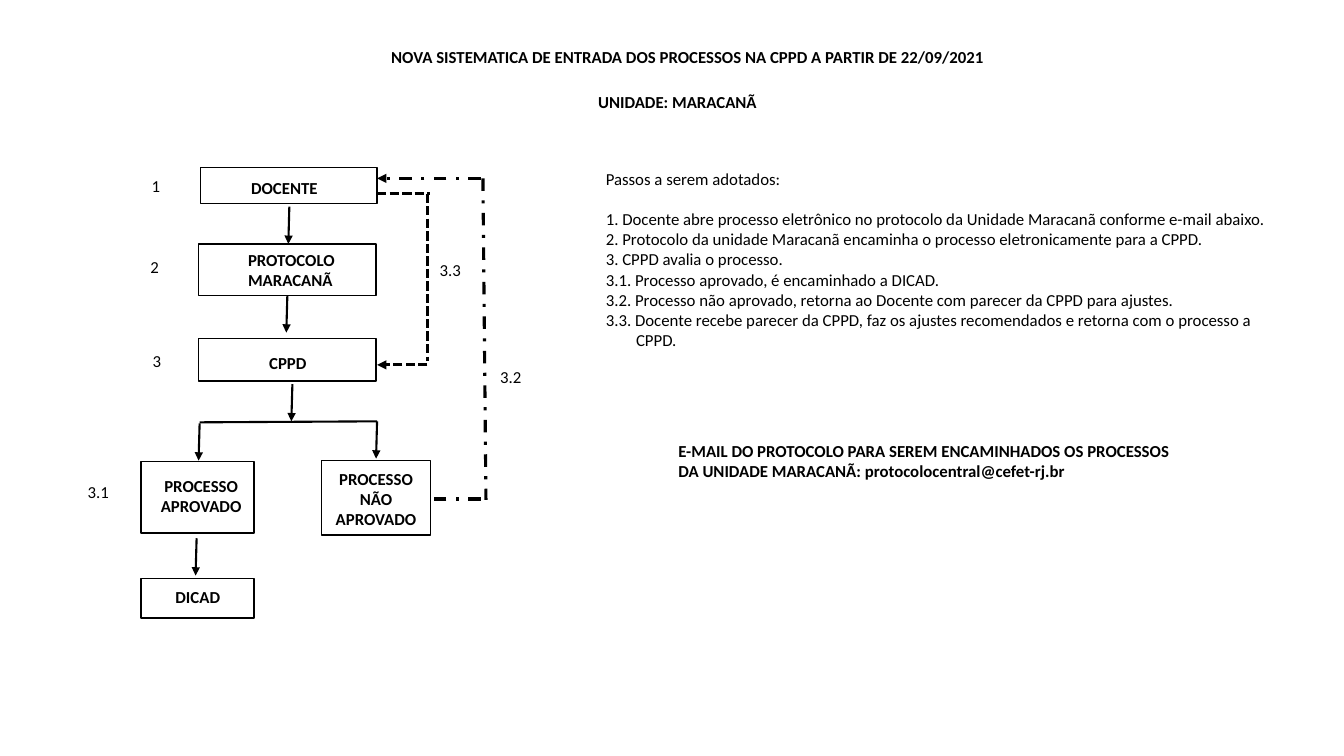
from dataclasses import dataclass
from pptx import Presentation
from pptx import util as u
from pptx.dml.color import RGBColor
from pptx.enum import dml, shapes, text
from pptx.oxml.ns import qn
from lxml import etree


@dataclass(frozen=True)
class Theme:
    ink: RGBColor = RGBColor(0, 0, 0)
    paper: RGBColor = RGBColor(255, 255, 255)
    face: str = "Calibri"
    size: int = 12
    thin: float = 1
    flow: float = 1.5
    loop: float = 2.25


T = Theme()
LEFT, MID = text.PP_ALIGN.LEFT, text.PP_ALIGN.CENTER
TOP, HALF = text.MSO_ANCHOR.TOP, text.MSO_ANCHOR.MIDDLE
DOT = dml.MSO_LINE.DASH_DOT
DASH = dml.MSO_LINE.SQUARE_DOT


def apply(obj, vals):
    for name, val in vals.items():
        setattr(obj, name, val)


def write(shape, lines, align=LEFT, bold=True, anchor=TOP, pad=(.1, .05, .1, .05)):
    frame = shape.text_frame
    frame.text = "\n".join(lines)
    sides = ("margin_left", "margin_top", "margin_right", "margin_bottom")
    apply(frame, {side: u.Inches(val) for side, val in zip(sides, pad)})
    apply(frame, {"word_wrap": True, "auto_size": text.MSO_AUTO_SIZE.NONE,
                  "vertical_anchor": anchor})
    for para in frame.paragraphs:
        para.alignment = align
        apply(para.font, {"name": T.face, "size": u.Pt(T.size), "bold": bold})
        para.font.color.rgb = T.ink
    return frame


def note(slide, box, lines, **form):
    return write(slide.shapes.add_textbox(*map(u.Inches, box)), lines, **form)


def block(slide, box, lines, edge, **form):
    shape = slide.shapes.add_shape(shapes.MSO_SHAPE.RECTANGLE, *map(u.Inches, box))
    shape.shadow.inherit = False
    shape.fill.solid()
    shape.fill.fore_color.rgb = T.paper
    shape.line.color.rgb = edge
    shape.line.width = u.Pt(T.thin)
    write(shape, lines, **form)


def link(slide, start, end, width, dash=None, head=False):
    line = slide.shapes.add_connector(
        shapes.MSO_CONNECTOR.STRAIGHT, *map(u.Inches, start + end))
    line.line.color.rgb = T.ink
    line.line.width = u.Pt(width)
    if dash:
        line.line.dash_style = dash
    props = line._element.spPr
    if head:
        etree.SubElement(props.find(qn("a:ln")), qn("a:tailEnd"), type="triangle")
    etree.SubElement(props, qn("a:effectLst"))


def heading(slide, x, y):
    title = slide.shapes.title
    place = {"left": x, "top": y, "width": 6.38, "height": .3}
    apply(title, {name: u.Inches(val) for name, val in place.items()})
    write(title, ["NOVA SISTEMATICA DE ENTRADA DOS PROCESSOS NA CPPD A PARTIR DE 22/09/2021"])
    note(slide, (x + .11, y + .45, 5.66, .3), ["UNIDADE: MARACANÃ"], align=MID)


def flow(slide, x, y):
    def at(point):
        return x + point[0], y + point[1]

    steps = [
        ((1.24, 0), (1.75, .36), ["DOCENTE"], LEFT, (.5, .1, 0, 0)),
        ((1.22, .76), (1.76, .51), ["PROTOCOLO", "MARACANÃ"], LEFT, (.49, .06, 0, 0)),
        ((1.22, 1.7), (1.76, .42), ["CPPD"], LEFT, (.7, .14, 0, 0)),
        ((.65, 2.92), (1.12, .71), ["PROCESSO APROVADO"], MID, (.14, .14, .07, 0)),
        ((2.44, 2.91), (1.08, .74), ["PROCESSO", "NÃO APROVADO"], MID, (.1, .08, .1, 0)),
        ((.65, 4.08), (1.12, .39), ["DICAD"], LEFT, (.34, .08, 0, 0)),
    ]
    for spot, size, lines, align, pad in steps:
        block(slide, at(spot) + size, lines, T.ink, align=align, pad=pad)

    tags = {"1": (.57, 0), "2": (.56, .81), "3": (.58, 1.74),
            "3.1": (0, 3.04), "3.2": (4.09, 1.9), "3.3": (3.49, .84)}
    for label, spot in tags.items():
        block(slide, at(spot) + (.45, .36), [label], T.paper,
              align=MID, bold=False, anchor=HALF)

    drops = [(2.12, .39), (2.1, 1.27), (2.15, 2.15),
             (2.99, 2.52), (1.23, 2.54), (1.2, 3.68)]
    for left, top in drops:
        link(slide, at((left, top)), at((left - .01, top + .37)), T.flow, head=True)
    link(slide, at((1.23, 2.53)), at((2.99, 2.52)), T.flow)

    loops = [
        (DOT, (4.02, 3.29), (3.53, 3.29), False),
        (DOT, (4.04, .11), (4.07, 3.3), False),
        (DOT, (4.02, .11), (2.99, .11), True),
        (DASH, (2.99, .26), (3.51, .26), False),
        (DASH, (3.49, .26), (3.49, 1.92), False),
        (DASH, (3.49, 1.96), (2.99, 1.96), True),
    ]
    for dash, start, end, head in loops:
        link(slide, at(start), at(end), T.loop, dash, head)


def guide(slide, x, y):
    frame = note(slide, (x, y, 6.79, 2.12), [
        "Passos a serem adotados:",
        "1. Docente abre processo eletrônico no protocolo da Unidade Maracanã conforme e-mail abaixo.",
        "2. Protocolo da unidade Maracanã encaminha o processo eletronicamente para a CPPD.",
        "3. CPPD avalia o processo.",
        "3.1. Processo aprovado, é encaminhado a DICAD.",
        "3.2. Processo não aprovado, retorna ao Docente com parecer da CPPD para ajustes.",
        "3.3. Docente recebe parecer da CPPD, faz os ajustes recomendados e retorna com o processo a CPPD.",
    ], bold=False)
    paras = frame.paragraphs
    paras[1].space_before = u.Pt(14.6)
    hang = u.Inches(.3)
    props = paras[-1]._p.get_or_add_pPr()
    props.set("marL", str(hang))
    props.set("indent", str(-hang))
    note(slide, (x + .72, y + 2.7, 5.25, .5), [
        "E-MAIL DO PROTOCOLO PARA SEREM ENCAMINHADOS OS PROCESSOS "
        "DA UNIDADE MARACANÃ: protocolocentral@cefet-rj.br"])


def main():
    deck = Presentation()
    apply(deck, {"slide_width": u.Inches(13.33), "slide_height": u.Inches(7.5)})
    slide = deck.slides.add_slide(deck.slide_layouts[5])
    heading(slide, 3.78, .41)
    flow(slide, .75, 1.66)
    guide(slide, 5.91, 1.62)
    deck.save("out.pptx")


if __name__ == "__main__":
    main()
